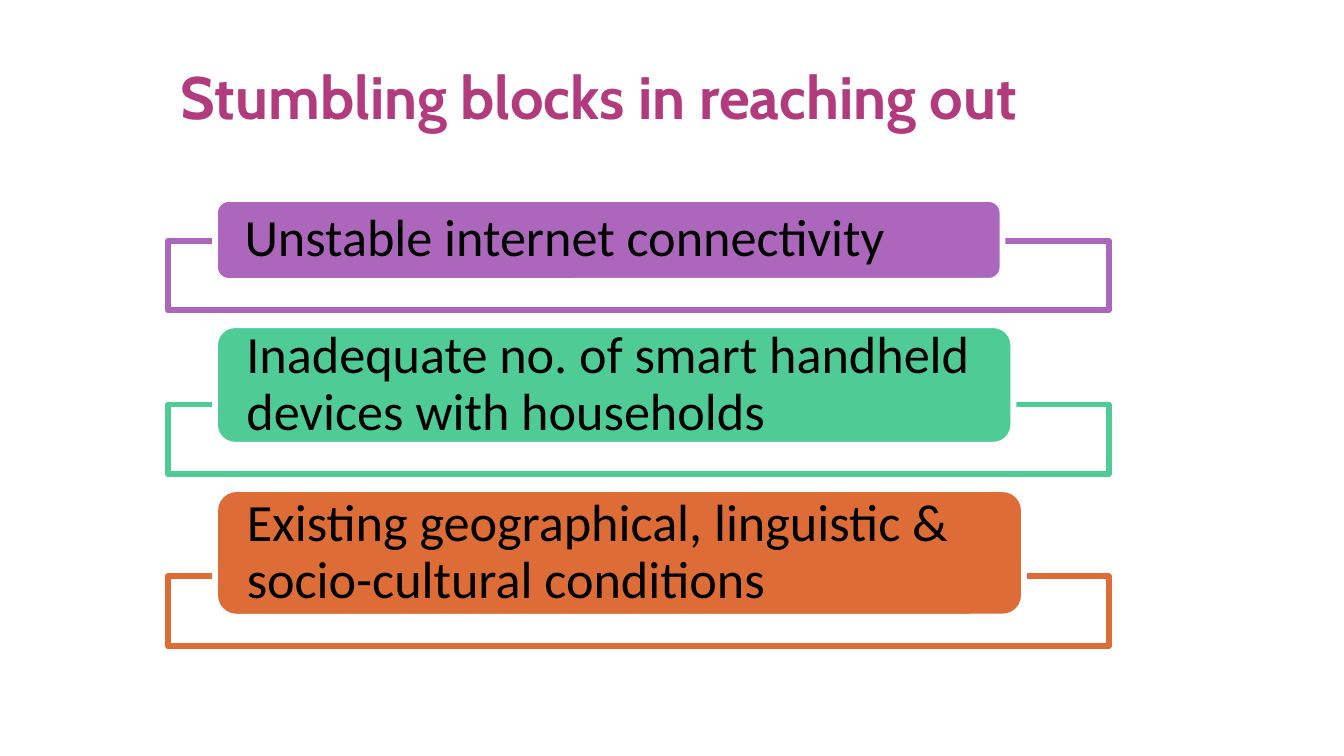
"""Build a slide listing three stumbling blocks in reaching out."""
import dataclasses

import lxml.etree
import pptx
import pptx.dml.color
import pptx.enum.shapes
import pptx.enum.text
import pptx.oxml.ns
import pptx.util

Pt = pptx.util.Pt
Shape = pptx.enum.shapes.MSO_SHAPE
Align = pptx.enum.text.PP_ALIGN
Anchor = pptx.enum.text.MSO_ANCHOR
qn = pptx.oxml.ns.qn
rgb = pptx.dml.color.RGBColor.from_string


@dataclasses.dataclass(frozen=True)
class Theme:
    title_font: str = "Cabin"
    body_font: str = "Calibri"
    title_size: int = 32
    body_size: int = 28
    title: str = "B23B7E"
    title_outline: str = "D020AD"
    text: str = "000000"
    paper: str = "FFFFFF"
    purple: str = "AC66BB"
    green: str = "4FCC96"
    orange: str = "DE6C36"
    line: float = 3.15


theme = Theme()


def write_text(box, text, *, font, size, color, bold=False, align=Align.LEFT,
               anchor=Anchor.MIDDLE, inset=0, spacing=1.0):
    frame = box.text_frame
    frame.word_wrap = True
    frame.vertical_anchor = anchor
    frame.margin_left = frame.margin_right = Pt(inset)
    frame.margin_top = frame.margin_bottom = 0
    para = frame.paragraphs[0]
    para.alignment = align
    para.line_spacing = spacing
    span = para.add_run()
    span.text = text
    span.font.name = font
    span.font.size = Pt(size)
    span.font.bold = bold
    span.font.color.rgb = rgb(color)
    return span


def add_panel(page, kind, left, top, width, height, fill, line):
    panel = page.shapes.add_shape(kind, Pt(left), Pt(top), Pt(width), Pt(height))
    panel.shadow.inherit = False
    panel.fill.solid()
    panel.fill.fore_color.rgb = rgb(fill)
    panel.line.color.rgb = rgb(line)
    panel.line.width = Pt(theme.line)
    return panel


deck = pptx.Presentation()
deck.slide_width, deck.slide_height = Pt(720), Pt(405)
page = deck.slides.add_slide(deck.slide_layouts[6])

title = page.shapes.add_textbox(Pt(36), Pt(18.7), Pt(570.2), Pt(51.8))
span = write_text(title, "Stumbling blocks in reaching out", font=theme.title_font,
                  size=theme.title_size, color=theme.title, bold=True,
                  align=Align.CENTER, anchor=Anchor.BOTTOM, inset=3.6)
outline = lxml.etree.Element(qn("a:ln"), w=str(Pt(1)))
outline_fill = lxml.etree.SubElement(outline, qn("a:solidFill"))
lxml.etree.SubElement(outline_fill, qn("a:srgbClr"), val=theme.title_outline)
span.font._element.insert(0, outline)

blocks = [
    ("Unstable internet connectivity", theme.purple, 421.9, 43.9),
    ("Inadequate no. of smart handheld devices with households", theme.green, 427.7, 64.1),
    ("Existing geographical, linguistic & socio-cultural conditions", theme.orange, 433.4, 68.4),
]
frame_left, frame_width, frame_height = 90, 504, 37.4
card_left, overlap, gap = 115.2, 21.6, 7.9

card_top = 106.6
for text, color, card_width, card_height in blocks:
    frame_top = card_top + card_height - overlap
    frame = add_panel(page, Shape.RECTANGLE, frame_left, frame_top, frame_width,
                      frame_height, theme.paper, color)
    frame_color = frame.fill._xPr.find(qn("a:solidFill"))[0]
    lxml.etree.SubElement(frame_color, qn("a:alpha"), val="90000")
    card = add_panel(page, Shape.ROUNDED_RECTANGLE, card_left, card_top, card_width,
                     card_height, color, theme.paper)
    write_text(card, text, font=theme.body_font, size=theme.body_size,
               color=theme.text, inset=13.7, spacing=0.9)
    card_top = frame_top + frame_height + gap

deck.save("out.pptx")
